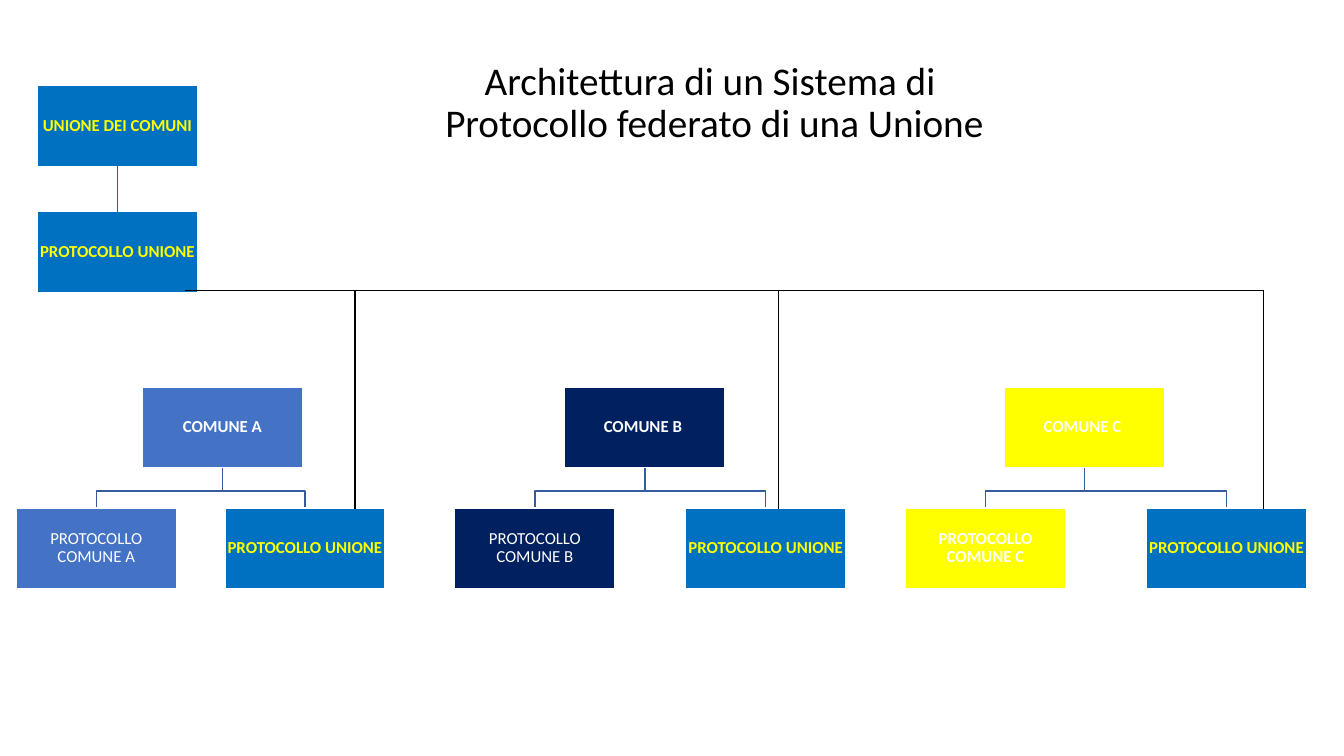
from dataclasses import dataclass
from itertools import pairwise

from pptx import Presentation
from pptx.dml.color import RGBColor
from pptx.enum.shapes import MSO_CONNECTOR, MSO_SHAPE
from pptx.enum.text import MSO_ANCHOR, PP_ALIGN
from pptx.oxml.ns import qn
from pptx.shapes.autoshape import Shape
from pptx.shapes.connector import Connector
from pptx.slide import Slide
from pptx.util import Inches, Pt
from lxml.etree import SubElement

COLOURS = {
    "union": "0070C0",
    "comune_a": "4472C4",
    "comune_b": "002060",
    "yellow": "FFFF00",
    "white": "FFFFFF",
    "black": "000000",
    "link": "365B9D",
}
FONT = "Calibri"
BOX_WIDTH, BOX_HEIGHT = 1.59, 0.8
UNION_LEFT, UNION_TOP, UNION_PROTOCOL_TOP = 0.37, 0.85, 2.1
COMUNE_TOP, PROTOCOL_TOP, ELBOW_Y = 3.84, 5.04, 4.87
BUS_START, BUS_Y, DROP_END = 1.84, 2.88, 5.05


@dataclass(frozen=True)
class Box:
    text: str
    left: float
    top: float
    fill: str
    colour: str = "white"
    bold: bool = True

    @property
    def centre(self) -> float:
        return self.left + BOX_WIDTH / 2


@dataclass(frozen=True)
class Branch:
    comune: Box
    protocol: Box
    union_left: float
    drop_x: float
    drop_width: float = 1


def union_box(text: str, left: float, top: float) -> Box:
    return Box(text, left, top, "union", "yellow")


BRANCHES = [
    Branch(
        Box("COMUNE A", 1.41, COMUNE_TOP, "comune_a"),
        Box("PROTOCOLLO COMUNE A", 0.16, PROTOCOL_TOP, "comune_a", bold=False),
        union_left=2.23, drop_x=3.52,
    ),
    Branch(
        Box("COMUNE B ", 5.6, COMUNE_TOP, "comune_b"),
        Box("PROTOCOLLO COMUNE B", 4.51, PROTOCOL_TOP, "comune_b", bold=False),
        union_left=6.8, drop_x=7.72,
    ),
    Branch(
        Box("COMUNE C ", 9.96, COMUNE_TOP, "yellow"),
        Box("PROTOCOLLO COMUNE C", 8.98, PROTOCOL_TOP, "yellow"),
        union_left=11.37, drop_x=12.53, drop_width=0.5,
    ),
]


def rgb(name: str) -> RGBColor:
    return RGBColor.from_string(COLOURS[name])


def draw_title(slide: Slide) -> None:
    title = slide.shapes.title
    title.left, title.top = Inches(1.42), Inches(0.76)
    title.width, title.height = Inches(11.33), Inches(0.54)
    frame = title.text_frame
    frame.vertical_anchor = MSO_ANCHOR.MIDDLE
    para = frame.paragraphs[0]
    para.alignment, para.line_spacing = PP_ALIGN.CENTER, 0.9
    lines = ["Architettura di un Sistema di ", "Protocollo federato di una Unione"]
    for number, line in enumerate(lines):
        if number:
            para.add_line_break()
        span = para.add_run()
        span.text = line
        span.font.name, span.font.size = FONT, Pt(28)
        span.font.color.rgb = rgb("black")


def draw_box(slide: Slide, box: Box) -> Shape:
    shape = slide.shapes.add_shape(
        MSO_SHAPE.RECTANGLE, Inches(box.left), Inches(box.top),
        Inches(BOX_WIDTH), Inches(BOX_HEIGHT),
    )
    shape.shadow.inherit = False
    shape.fill.solid()
    shape.fill.fore_color.rgb = rgb(box.fill)
    shape.line.color.rgb = rgb("white")
    shape.line.width = Pt(1)
    frame = shape.text_frame
    frame.word_wrap = True
    frame.vertical_anchor = MSO_ANCHOR.MIDDLE
    frame.margin_left = frame.margin_right = Inches(0.01)
    frame.margin_top = frame.margin_bottom = Inches(0.01)
    para = frame.paragraphs[0]
    para.alignment, para.line_spacing = PP_ALIGN.CENTER, 0.9
    span = para.add_run()
    span.text = box.text
    span.font.name, span.font.size, span.font.bold = FONT, Pt(12), box.bold
    span.font.color.rgb = rgb(box.colour)
    return shape


def draw_line(
    slide: Slide, start: tuple[float, float], end: tuple[float, float],
    colour: str = "black", width: float = 1,
) -> Connector:
    line = slide.shapes.add_connector(
        MSO_CONNECTOR.STRAIGHT, *(Inches(value) for value in (*start, *end))
    )
    line.line.color.rgb = rgb(colour)
    line.line.width = Pt(width)
    SubElement(line._element.spPr, qn("a:effectLst"))
    return line


def draw_elbow(slide: Slide, parent: Box, child: Box) -> None:
    """Link the bottom of a parent box to the top of a child with two bends."""
    corners = [
        (parent.centre, parent.top + BOX_HEIGHT),
        (parent.centre, ELBOW_Y),
        (child.centre, ELBOW_Y),
        (child.centre, child.top),
    ]
    start, *others = [(Inches(x), Inches(y)) for x, y in corners]
    builder = slide.shapes.build_freeform(*start)
    builder.add_line_segments(others, close=False)
    elbow = builder.convert_to_shape()
    elbow.shadow.inherit = False
    elbow.fill.background()
    elbow.line.color.rgb = rgb("link")
    elbow.line.width = Pt(1)


def draw_union(slide: Slide) -> None:
    union = union_box("UNIONE DEI COMUNI", UNION_LEFT, UNION_TOP)
    protocol = union_box("PROTOCOLLO UNIONE", UNION_LEFT, UNION_PROTOCOL_TOP)
    union_shape, protocol_shape = draw_box(slide, union), draw_box(slide, protocol)
    link = draw_line(
        slide, (union.centre, union.top + BOX_HEIGHT),
        (protocol.centre, protocol.top), "link",
    )
    link.begin_connect(union_shape, 2)
    link.end_connect(protocol_shape, 0)


def draw_branch(slide: Slide, branch: Branch) -> None:
    children = [
        branch.protocol,
        union_box("PROTOCOLLO UNIONE", branch.union_left, PROTOCOL_TOP),
    ]
    for child in children:
        draw_elbow(slide, branch.comune, child)
    for box in (branch.comune, *children):
        draw_box(slide, box)


def draw_bus(slide: Slide) -> None:
    """Run the black line from the union's protocol down to each branch."""
    stops = [BUS_START, *(branch.drop_x for branch in BRANCHES)]
    for (left, right), branch in zip(pairwise(stops), BRANCHES):
        draw_line(slide, (left, BUS_Y), (right, BUS_Y))
        draw_line(slide, (right, BUS_Y), (right, DROP_END), width=branch.drop_width)


def main() -> None:
    deck = Presentation()
    deck.slide_width, deck.slide_height = Inches(13.33), Inches(7.5)
    slide = deck.slides.add_slide(deck.slide_layouts[5])
    draw_title(slide)
    draw_union(slide)
    for branch in BRANCHES:
        draw_branch(slide, branch)
    draw_bus(slide)
    deck.save("out.pptx")


if __name__ == "__main__":
    main()
